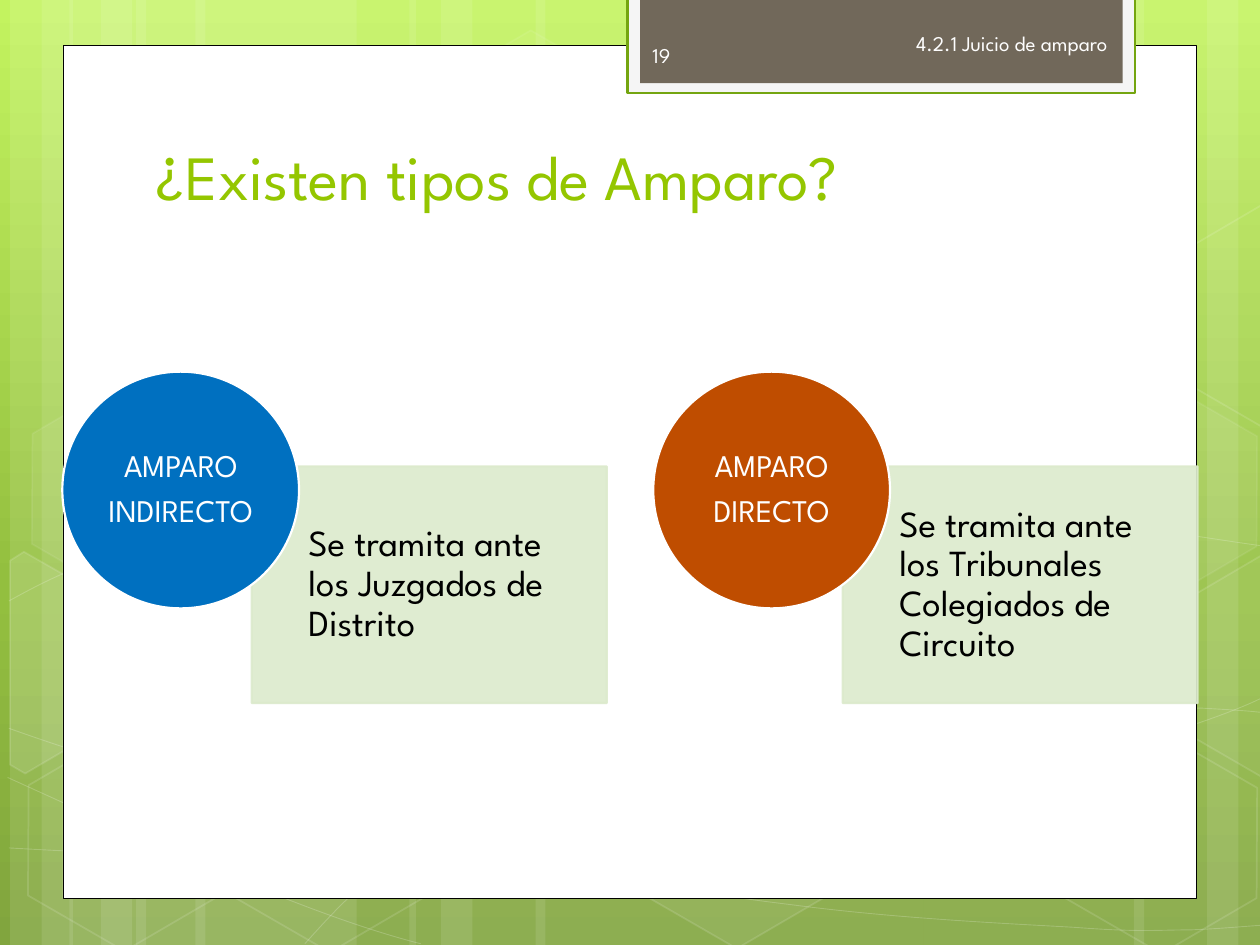
from copy import deepcopy
from collections import namedtuple

from lxml.etree import SubElement
from pptx import Presentation
from pptx.dml.color import RGBColor
from pptx.enum.shapes import MSO_SHAPE
from pptx.enum.text import MSO_ANCHOR, PP_ALIGN
from pptx.oxml.ns import qn
from pptx.util import Inches, Pt

FONT = "League Spartan"
WHITE = RGBColor(0xFF, 0xFF, 0xFF)
BLACK = RGBColor(0, 0, 0)
LIME = RGBColor(0x94, 0xC6, 0x00)
TAB_EDGE = RGBColor(0x74, 0xA5, 0x10)
TAB_RIM = RGBColor(0xF5, 0xF5, 0xF5)
TAB_FILL = RGBColor(0x71, 0x68, 0x5A)
TAB_TEXT = RGBColor(0xFE, 0xFE, 0xFE)
PALE_GREEN = RGBColor(0xDC, 0xEA, 0xCC)
BLUE = RGBColor(0x00, 0x70, 0xC0)
RUST = RGBColor(0xBF, 0x4D, 0x00)
SKY = [(0, RGBColor(0xC3, 0xF3, 0x5F)), (0.62, RGBColor(0x93, 0xBF, 0x3F)),
       (1, RGBColor(0x81, 0xA5, 0x3E))]

# The page is a grid of 10 columns by 7.5 rows, one inch each.
Box = namedtuple("Box", "left top width height")
SLIDE = Box(0, 0, 10, 7.5)

# Left edge and width of each full-height stripe
STRIPES = [(1.08, 1.75), (0.08, 0.5), (0.33, 0.83), (1.55, 1.75), (0.55, 0.5),
           (0.8, 0.83), (7.33, 1.75), (9.58, 0.5), (9, 0.83), (4.25, 3.08),
           (3.25, 0.5), (3.5, 0.83)]

# Start point, then two handles and an end point for each Bézier piece
WAVES = [
    [(0.07, 6.73), (0.61, 6.76), (1.15, 6.79), (1.9, 6.78), (2.65, 6.77),
     (3.58, 6.75), (4.58, 6.65), (5.58, 6.55), (7, 6.36), (7.92, 6.17),
     (8.83, 5.98), (9.77, 5.68), (10.07, 5.51)],
    [(0.07, 4.77), (0.36, 4.61), (0.65, 4.46), (1.21, 4.31), (1.78, 4.16),
     (2.59, 3.94), (3.47, 3.87), (4.36, 3.8), (5.44, 3.79), (6.54, 3.87),
     (7.64, 3.95), (9.47, 4.26), (10.07, 4.34)],
    [(0.06, 6.17), (1.27, 6.72), (2.47, 7.27), (3.34, 7.49)],
    [(0.07, 5.78), (0.38, 5.89), (0.7, 6), (1.28, 6.16), (1.86, 6.31),
     (2.73, 6.56), (3.57, 6.73), (4.4, 6.9), (5.45, 7.08), (6.28, 7.18),
     (7.11, 7.29), (8, 7.33), (8.53, 7.36), (9.05, 7.4), (9.19, 7.38),
     (9.45, 7.38), (9.71, 7.37), (9.89, 7.35), (10.07, 7.34)],
    [(2.42, 7.49), (2.6, 7.29), (2.78, 7.09), (3.02, 6.91), (3.26, 6.73),
     (3.6, 6.53), (3.88, 6.39), (4.16, 6.25), (4.33, 6.19), (4.7, 6.09),
     (5.06, 5.99), (5.73, 5.85), (6.08, 5.78), (6.44, 5.71), (6.49, 5.71),
     (6.8, 5.69), (7.11, 5.66), (7.6, 5.63), (7.94, 5.62), (8.29, 5.61),
     (8.86, 5.62), (8.86, 5.62), (9.08, 5.62), (9.31, 5.62), (9.53, 5.62),
     (9.71, 5.63), (9.88, 5.64), (9.97, 5.65), (10.06, 5.66), (10.03, 5.65),
     (10.06, 5.66)],
]

# Left, top, fill opacity (0 is unfilled) and line opacity, in percent
HEXAGONS = [(3.34, 0.36, 4, 8), (4.97, 5.89, 6, 12), (0.11, 5.91, 0, 12),
            (0.14, 3.12, 7, 8), (1.74, 5.92, 0, 12), (7.53, 4.53, 10, 12),
            (8.34, 5.93, 0, 12), (8.34, 3.14, 7, 8)]

# Hexagons cut off by the slide edge: fill opacity and corners
CUT_HEXAGONS = [
    (10, [(0.08, 4.45), (0.19, 4.38), (0.96, 4.82), (0.95, 5.7), (0.2, 6.14),
          (0.08, 6.07)]),
    (4, [(9.26, 4.85), (10.01, 4.41), (10.09, 4.46), (10.09, 6.13),
         (10.02, 6.17), (9.26, 5.73)]),
    (0, [(9.26, 2.07), (10.01, 1.63), (10.1, 1.68), (10.09, 3.35),
         (10.02, 3.39), (9.26, 2.95)]),
]


def style(shape, fill=None, fill_alpha=100, line=None, line_width=1, line_alpha=100):
    shape.shadow.inherit = False
    properties = shape._element.spPr
    for paint, color, alpha, place in (
            (shape.fill, fill, fill_alpha, "./a:solidFill/a:srgbClr"),
            (shape.line.fill, line, line_alpha, "./a:ln/a:solidFill/a:srgbClr")):
        if color is None or alpha == 0:
            paint.background()
            continue
        paint.solid()
        paint.fore_color.rgb = color
        if alpha < 100:
            node = properties.xpath(place)[0]
            SubElement(node, qn("a:alpha")).set("val", str(alpha * 1000))
    if line is not None:
        shape.line.width = Pt(line_width)
    return shape


def add_shape(page, kind, box, **look):
    shape = page.shapes.add_shape(kind, *(Inches(length) for length in box))
    return style(shape, **look)


def add_outline(page, points, closed, **look):
    corners = [(Inches(x), Inches(y)) for x, y in points]
    builder = page.shapes.build_freeform(*corners[0])
    builder.add_line_segments(corners[1:], close=closed)
    return style(builder.convert_to_shape(), **look)


def add_wave(page, nodes, **look):
    """Draw an open outline whose points are joined by cubic curves."""
    wave = add_outline(page, nodes, False, **look)
    outline = wave._element.xpath(".//a:path")[0]
    segments = outline.findall(qn("a:lnTo"))
    for first in range(0, len(segments), 3):
        curve = SubElement(outline, qn("a:cubicBezTo"))
        for segment in segments[first:first + 3]:
            curve.append(segment[0])
            outline.remove(segment)


def write(shape, text, size, color, align=PP_ALIGN.LEFT, anchor=MSO_ANCHOR.MIDDLE,
          insets=(0.1, 0.05, 0.1, 0.05), spacing=1, after=0):
    """Fill a shape with text; insets run left, top, right, bottom in inches."""
    frame = shape.text_frame
    frame.word_wrap = True
    frame.vertical_anchor = anchor
    (frame.margin_left, frame.margin_top,
     frame.margin_right, frame.margin_bottom) = map(Inches, insets)
    frame.text = text
    for para in frame.paragraphs:
        para.alignment = align
        para.line_spacing = spacing
        para.space_after = Pt(after)
        for span in para.runs:
            span.font.name = FONT
            span.font.size = Pt(size)
            span.font.color.rgb = color


def add_text(page, box, text, size, color, **layout):
    shape = page.shapes.add_textbox(*(Inches(length) for length in box))
    write(shape, text, size, color, **layout)


def draw_backdrop(page, box):
    fill = page.background.fill
    fill.gradient()
    fill.gradient_angle = 270
    last = fill.gradient_stops[1]._gs
    last.addprevious(deepcopy(last))
    for stop, (position, color) in zip(fill.gradient_stops, SKY):
        stop.position = position
        stop.color.rgb = color

    for left, width in STRIPES:
        add_shape(page, MSO_SHAPE.RECTANGLE, Box(box.left + left, box.top, width, box.height),
                  fill=WHITE, fill_alpha=10)
    for nodes in WAVES:
        add_wave(page, nodes, line=WHITE, line_width=0.5, line_alpha=20)
    for left, top, fill_alpha, line_alpha in HEXAGONS:
        hexagon = add_shape(page, MSO_SHAPE.HEXAGON, Box(box.left + left, box.top + top, 1.75, 1.52),
                            fill=WHITE, fill_alpha=fill_alpha, line=WHITE, line_alpha=line_alpha)
        hexagon.adjustments[0] = 0.285
        hexagon.rotation = 30
    for fill_alpha, corners in CUT_HEXAGONS:
        add_outline(page, corners, True, fill=WHITE, fill_alpha=fill_alpha,
                    line=WHITE, line_alpha=12)


def draw_header_tab(page, box, number, heading):
    rim = 0.1
    inner = Box(box.left + rim, box.top, box.width - 2 * rim, box.height - 0.08)
    add_shape(page, MSO_SHAPE.RECTANGLE, box, fill=TAB_RIM, line=TAB_EDGE, line_width=1.25)
    add_shape(page, MSO_SHAPE.RECTANGLE, inner, fill=TAB_FILL)
    add_text(page, Box(inner.left + 1.48, box.top + 0.16, 2.33, 0.4), heading, 12, TAB_TEXT,
             align=PP_ALIGN.RIGHT)
    add_text(page, Box(inner.left, box.top + 0.26, 1.46, 0.4), number, 12, TAB_TEXT)


def draw_amparo_type(page, box, name, description, color):
    """Draw a named circle overlapping the corner of its description panel."""
    side = box.height / 1.4
    panel_box = Box(box.left + 0.8 * side, box.top + box.height - side, 1.5 * side, side)
    panel = add_shape(page, MSO_SHAPE.RECTANGLE, panel_box, fill=PALE_GREEN, fill_alpha=90,
                      line=PALE_GREEN, line_width=1.25, line_alpha=90)
    write(panel, description, 21, BLACK, insets=(0.45, 0.16, 0.16, 0.16), spacing=0.9, after=7)
    circle = add_shape(page, MSO_SHAPE.OVAL, Box(box.left, box.top, side, side),
                       fill=color, line=WHITE, line_width=1.25)
    write(circle, name, 18, WHITE, align=PP_ALIGN.CENTER, insets=(0, 0, 0, 0),
          spacing=0.9, after=6.3)


def main():
    deck = Presentation()
    deck.slide_width, deck.slide_height = Inches(SLIDE.width), Inches(SLIDE.height)
    page = deck.slides.add_slide(deck.slide_layouts[6])
    draw_backdrop(page, SLIDE)
    add_shape(page, MSO_SHAPE.RECTANGLE, Box(0.5, 0.36, 9, 6.77),
              fill=WHITE, line=BLACK, line_width=0.5)
    draw_header_tab(page, Box(4.98, -0.02, 4.03, 0.76), "19", "4.2.1 Juicio de amparo")
    add_text(page, Box(1.14, 1.12, 7.68, 0.62), "¿Existen tipos de Amparo?", 36, LIME,
             anchor=MSO_ANCHOR.BOTTOM)
    amparo_types = [
        ("AMPARO\nINDIRECTO", "Se tramita ante los Juzgados de Distrito", BLUE),
        ("AMPARO\nDIRECTO", "Se tramita ante los Tribunales Colegiados de Circuito", RUST),
    ]
    width, pitch = 4.32, 4.69
    left = (SLIDE.width - pitch - width) / 2
    for column, amparo_type in enumerate(amparo_types):
        draw_amparo_type(page, Box(left + pitch * column, 2.95, width, 2.63), *amparo_type)
    deck.save("out.pptx")


if __name__ == "__main__":
    main()
